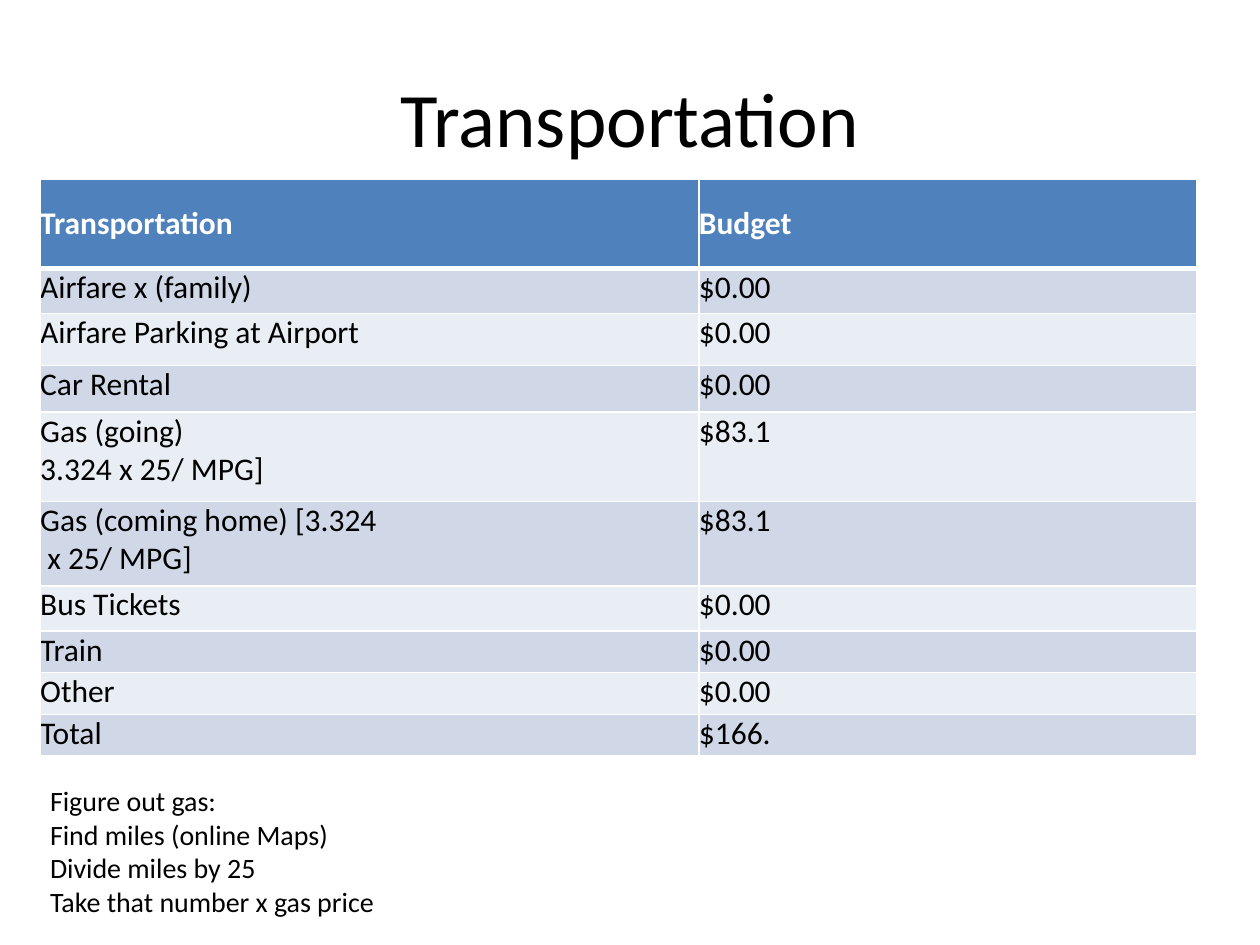
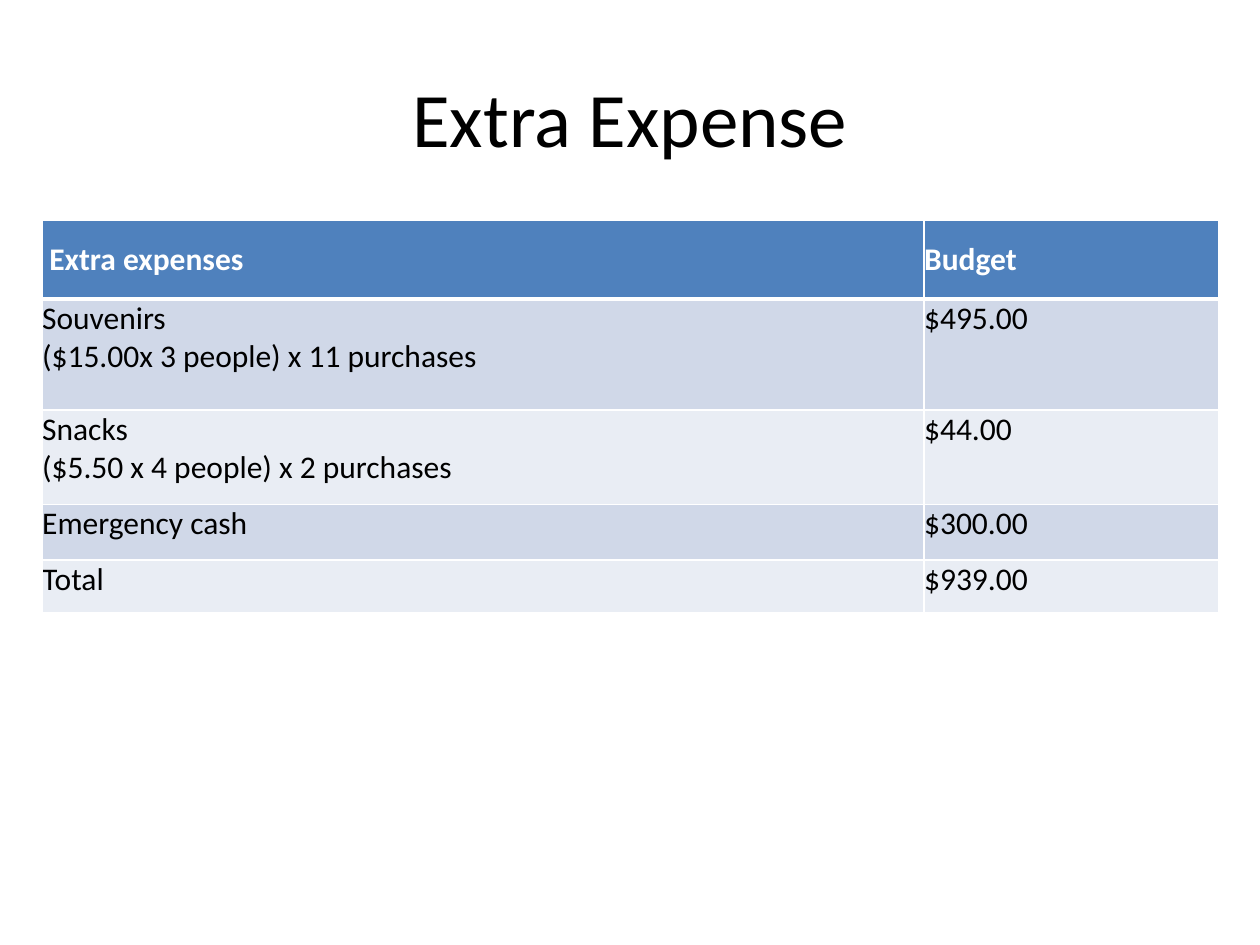
from lxml.etree import SubElement
from pptx import Presentation
from pptx.dml.color import RGBColor as RGB
from pptx.enum.text import MSO_ANCHOR as ANCHOR, PP_ALIGN as ALIGN
from pptx.oxml.ns import qn
from pptx.util import Cm, Pt

BLACK = RGB(0x00, 0x00, 0x00)
WHITE = RGB(0xFF, 0xFF, 0xFF)
HEADER_BLUE = RGB(0x4F, 0x81, 0xBD)
BANDS = (RGB(0xD0, 0xD8, 0xE8), RGB(0xE9, 0xED, 0xF4))

TITLE = dict(size=Pt(44), color=BLACK)
HEADER = dict(size=Pt(18), color=WHITE, bold=True)
BODY = dict(size=Pt(18), color=BLACK, bold=False)
NOTE = dict(size=Pt(16), color=BLACK)

NO_MARGINS = dict(margin_left=0, margin_top=0, margin_right=0, margin_bottom=0)
THIN, THICK = Pt(1), Pt(3)


class Deck:
    font = "Calibri"

    def __init__(self):
        self.prs = Presentation()
        self.prs.slide_width, self.prs.slide_height = Cm(25.4), Cm(19.05)
        self.s = None

    def slide(self, title):
        self.s = self.prs.slides.add_slide(self.prs.slide_layouts[6])
        self.text([title], (1.27, 0.76, 22.86, 3.18), TITLE,
                  align=ALIGN.CENTER, anchor=ANCHOR.MIDDLE)

    def add_lines(self, tf, lines, style, align=ALIGN.LEFT):
        """Put one paragraph per line into a text frame."""
        for i, line in enumerate(lines):
            p = tf.add_paragraph() if i else tf.paragraphs[0]
            p.alignment = align
            r = p.add_run()
            r.text = line
            r.font.name = self.font
            for name, value in style.items():
                if name == "color":
                    r.font.color.rgb = value
                else:
                    setattr(r.font, name, value)

    def text(self, lines, box, style, align=ALIGN.LEFT, anchor=ANCHOR.TOP, wrap=True):
        tf = self.s.shapes.add_textbox(*map(Cm, box)).text_frame
        tf.word_wrap = wrap
        tf.vertical_anchor = anchor
        self.add_lines(tf, lines, style, align)

    def borders(self, cell, top, bottom):
        """Draw white cell edges; must run before the cell gets its fill."""
        tc_pr = cell._tc.get_or_add_tcPr()
        for side, width in zip("LRTB", (THIN, THIN, top, bottom)):
            ln = SubElement(tc_pr, qn(f"a:ln{side}"), w=str(width))
            fill = SubElement(ln, qn("a:solidFill"))
            SubElement(fill, qn("a:srgbClr"), val=str(WHITE))

    def table(self, left, top, widths, heights, rows):
        """Fill a banded table whose first row is the header."""
        table = self.s.shapes.add_table(
            len(rows), len(widths), Cm(left), Cm(top),
            Cm(sum(widths)), Cm(sum(heights))).table
        for column, width in zip(table.columns, widths):
            column.width = Cm(width)
        for i, (height, texts) in enumerate(zip(heights, rows)):
            table.rows[i].height = Cm(height)
            is_header = i == 0
            for j, text in enumerate(texts):
                cell = table.cell(i, j)
                for name, value in NO_MARGINS.items():
                    setattr(cell, name, value)
                cell.vertical_anchor = ANCHOR.MIDDLE if is_header else ANCHOR.TOP
                self.borders(cell, top=THICK if i == 1 else THIN,
                             bottom=THICK if is_header else THIN)
                cell.fill.solid()
                cell.fill.fore_color.rgb = HEADER_BLUE if is_header else BANDS[(i - 1) % 2]
                self.add_lines(cell.text_frame, text.split("\n"),
                               HEADER if is_header else BODY)


def transportation(deck):
    deck.slide("Transportation")
    deck.table(0.81, 3.61, (13.28, 10.03),
               (1.8, 0.91, 1.05, 0.94, 1.8, 1.7, 0.91, 0.84, 0.84, 0.84), [
                   ("Transportation", "Budget"),
                   ("Airfare x (family)", "$0.00"),
                   ("Airfare Parking at Airport", "$0.00"),
                   ("Car Rental", "$0.00"),
                   ("Gas (going)\n3.324 x 25/ MPG]", "$83.1"),
                   ("Gas (coming home) [3.324\n x 25/ MPG]", "$83.1"),
                   ("Bus Tickets", "$0.00"),
                   ("Train", "$0.00"),
                   ("Other", "$0.00"),
                   ("Total", "$166."),
               ])
    deck.text(["Figure out gas:", "Find miles (online Maps)", "Divide miles by 25",
               "Take that number x gas price"],
              (0.76, 15.67, 7.1, 3), NOTE, wrap=False)


def extra_expense(deck):
    deck.slide("Extra Expense")
    deck.table(0.85, 4.45, (17.78, 5.93), (1.58, 2.24, 1.9, 1.12, 1.06), [
        (" Extra expenses", "Budget"),
        ("Souvenirs\n($15.00x 3 people) x 11 purchases", "$495.00"),
        ("Snacks\n($5.50 x 4 people) x 2 purchases", "$44.00"),
        ("Emergency cash", "$300.00"),
        ("Total", "$939.00"),
    ])


def main():
    deck = Deck()
    transportation(deck)
    extra_expense(deck)
    deck.prs.save("out.pptx")


if __name__ == "__main__":
    main()
